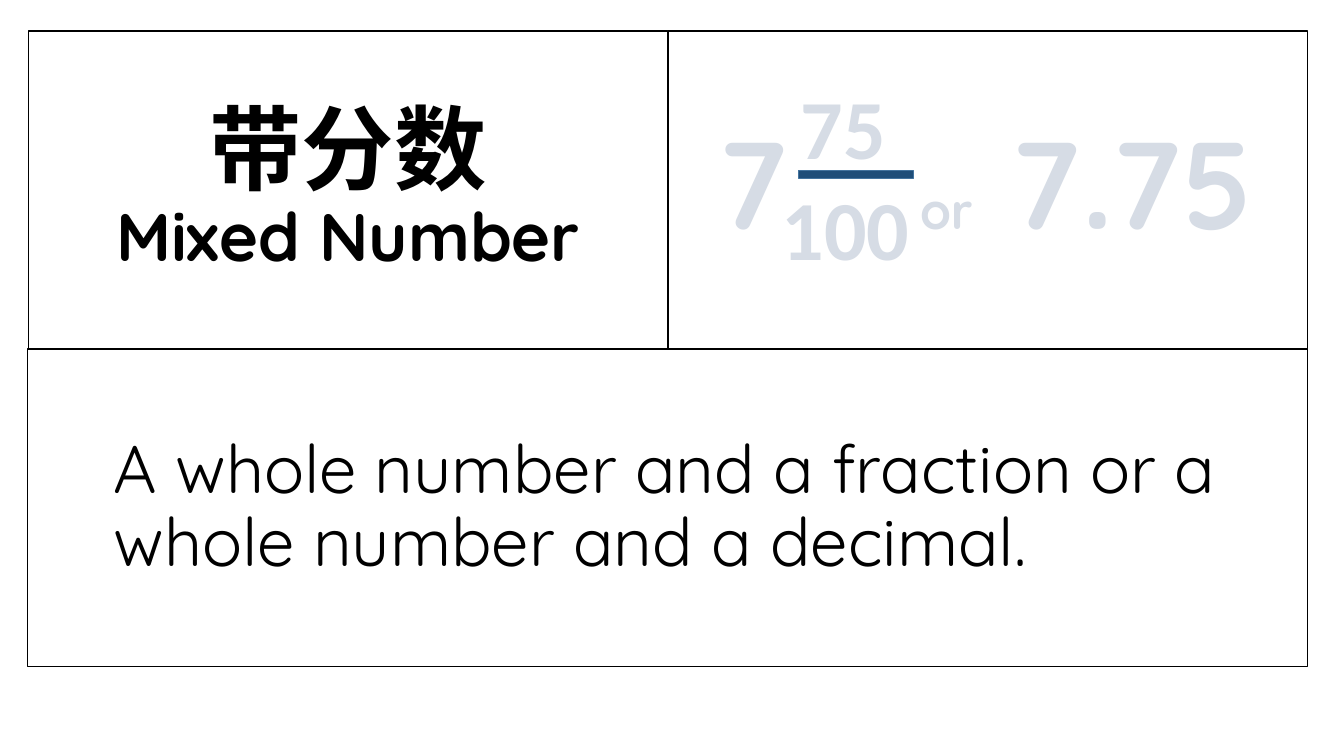
import pptx
import pptx.util
import pptx.dml.color
import pptx.enum.shapes
import pptx.enum.text
import pptx.oxml.ns
import lxml.etree

PX = 914400 / 100.8
SHAPE = pptx.enum.shapes.MSO_SHAPE
ALIGN = pptx.enum.text.PP_ALIGN
INK, PALE = "000000", "D6DCE5"


def px(*sizes):
    return [pptx.util.Emu(round(size * PX)) for size in sizes]


def paint(run, face, size, tint, bold):
    run.font.name = face
    run.font.size = pptx.util.Pt(size)
    run.font.bold = bold
    run.font.color.rgb = pptx.dml.color.RGBColor.from_string(tint)


deck = pptx.Presentation()
deck.slide_width, deck.slide_height = px(1344, 756)
slide = deck.slides.add_slide(deck.slide_layouts[6])

# Three framed cells: term, example, meaning
left, top, wide, high = 28, 31, 640, 318
cells = [
    (left, top, wide, 10, ALIGN.CENTER, ["带分数\v", "Mixed Number"],
     [("Lato", 66), ("Quicksand", 48)], INK, True),
    (left + wide, top, wide, 50, ALIGN.LEFT, ["7\t", "or\t", "7.75"],
     [("Quicksand", 88), ("Quicksand", 36), ("Quicksand", 88)], PALE, True),
    (left, top + high, 2 * wide, 86, ALIGN.LEFT,
     ["A whole number and a fraction or a whole number and a decimal."],
     [("Quicksand", 48)], INK, False),
]
for x, y, w, inset, align, parts, fonts, tint, bold in cells:
    cell = slide.shapes.add_shape(SHAPE.RECTANGLE, *px(x, y, w, high))
    cell.shadow.inherit = False
    cell.fill.background()
    cell.line.color.rgb = pptx.dml.color.RGBColor.from_string(INK)
    cell.line.width = pptx.util.Pt(0.75)
    frame = cell.text_frame
    frame.word_wrap = True
    frame.vertical_anchor = pptx.enum.text.MSO_ANCHOR.MIDDLE
    frame.margin_left = px(inset)[0]
    para = frame.paragraphs[0]
    para.alignment = align
    para.line_spacing = 0.9
    for part, (face, size) in zip(parts, fonts):
        run = para.add_run()
        run.text = part.rstrip("\v")
        paint(run, face, size, tint, bold)
        if part.endswith("\v"):
            para.add_line_break()

    # Tab stops that leave room for the fraction
    if "\t" in parts[0]:
        props = para._p.get_or_add_pPr()
        tabs = lxml.etree.SubElement(props, pptx.oxml.ns.qn("a:tabLst"))
        for stop in px(202, 294):
            lxml.etree.SubElement(tabs, pptx.oxml.ns.qn("a:tab"),
                                  pos=str(stop), algn="l")

# Fraction digits
box = slide.shapes.add_textbox(*px(753, 71, 207, 244))
frame = box.text_frame
frame.word_wrap = True
frame.text = "75\n100"
for para, dent in zip(frame.paragraphs, px(38, 19)):
    para._p.get_or_add_pPr().set("marL", str(dent))
    paint(para.runs[0], "Calibri", 60, PALE, True)

# Fraction bar
bar = slide.shapes.add_shape(SHAPE.MATH_MINUS, *px(778, 157, 156, 35))
bar.shadow.inherit = False
bar.fill.solid()
bar.fill.fore_color.rgb = pptx.dml.color.RGBColor.from_string("1F4E79")
bar.line.color.rgb = pptx.dml.color.RGBColor.from_string("43739E")
bar.line.width = pptx.util.Pt(1)

deck.save("out.pptx")
